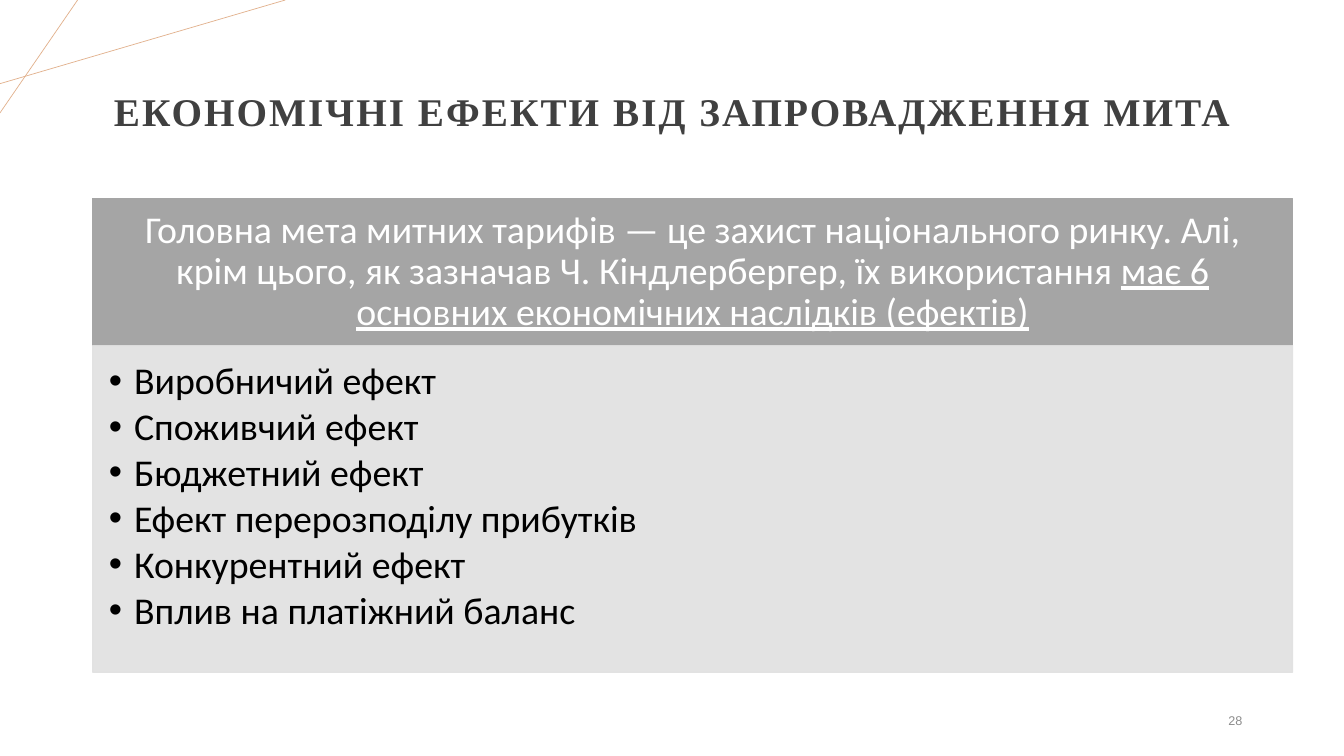
import pptx
import pptx.util
import pptx.dml.color
import pptx.enum.shapes
import pptx.enum.text
import pptx.oxml
import pptx.oxml.ns

Inches, Pt = pptx.util.Inches, pptx.util.Pt
RGBColor = pptx.dml.color.RGBColor
ALIGN = pptx.enum.text.PP_ALIGN
ANCHOR = pptx.enum.text.MSO_ANCHOR
SHAPE = pptx.enum.shapes.MSO_SHAPE
NS = pptx.oxml.ns.nsdecls("a")

# Content
TITLE = "ЕКОНОМІЧНІ ЕФЕКТИ ВІД ЗАПРОВАДЖЕННЯ МИТА"
INTRO = [
    ("Головна мета митних тарифів — це захист національного ринку. Алі, "
     "крім цього, як зазначав Ч. Кіндлербергер, їх використання ", False),
    ("має 6 основних економічних наслідків (ефектів)", True),
]
EFFECTS = [
    "Виробничий ефект",
    "Споживчий ефект",
    "Бюджетний ефект",
    "Ефект перерозподілу прибутків",
    "Конкурентний ефект",
    "Вплив на платіжний баланс",
]
PAGE = "28"
CORNER_LINES = [(0, 0.83, 2.83, 0), (0.77, 0, 0, 1.12)]

# Layout in inches
LEFT, TOP, WIDTH = 0.92, 1.97, 11.9
HEAD_H, BODY_H = 1.46, 3.24

# Colours
ORANGE = RGBColor(0xE2, 0xB1, 0x8D)
GREY = RGBColor(0xA5, 0xA5, 0xA5)
PALE = RGBColor(0xE1, 0xE1, 0xE1)
DARK = RGBColor(0x40, 0x40, 0x40)
MUTED = RGBColor(0x8C, 0x8C, 0x8C)
WHITE = RGBColor(0xFF, 0xFF, 0xFF)
BLACK = RGBColor(0, 0, 0)


def set_frame(sp, anchor, insets=(0.1, 0.05, 0.1, 0.05)):
    tf = sp.text_frame
    tf.word_wrap = True
    tf.vertical_anchor = anchor
    tf.margin_left, tf.margin_top, tf.margin_right, tf.margin_bottom = map(Inches, insets)
    return tf


def add_run(p, text, font, size, color):
    r = p.add_run()
    r.text = text
    r.font.name, r.font.size = font, Pt(size)
    r.font.color.rgb = color
    return r


def add_panel(s, top, height, color):
    sp = s.shapes.add_shape(SHAPE.RECTANGLE, Inches(LEFT), Inches(top),
                            Inches(WIDTH), Inches(height))
    sp.shadow.inherit = False
    sp.fill.solid()
    sp.fill.fore_color.rgb = color
    sp.line.color.rgb = color
    sp.line.width = Pt(1)
    return sp


def add_bullet(p):
    pPr = p._p.get_or_add_pPr()
    pPr.set("marL", str(Inches(0.25)))
    pPr.set("indent", str(Inches(-0.25)))
    pPr.append(pptx.oxml.parse_xml(f'<a:buFont {NS} typeface="Arial"/>'))
    pPr.append(pptx.oxml.parse_xml(f'<a:buChar {NS} char="•"/>'))


prs = pptx.Presentation()
prs.slide_width, prs.slide_height = Inches(13.33), Inches(7.5)
s = prs.slides.add_slide(prs.slide_layouts[6])

# Corner lines
for ends in CORNER_LINES:
    line = s.shapes.add_connector(pptx.enum.shapes.MSO_CONNECTOR.STRAIGHT, *map(Inches, ends))
    line.line.color.rgb = ORANGE
    line.line.width = Pt(0.5)
    line._element.spPr.append(pptx.oxml.parse_xml(f"<a:effectLst {NS}/>"))

# Heading panel
head = add_panel(s, TOP, HEAD_H, GREY)
p = set_frame(head, ANCHOR.MIDDLE, (0.21, 0.12, 0.21, 0.12)).paragraphs[0]
p.alignment, p.line_spacing = ALIGN.CENTER, 0.9
for text, underlined in INTRO:
    r = add_run(p, text, "Calibri", 27, WHITE)
    if underlined:
        r.font.underline = True

# Effects panel, slightly transparent
body = add_panel(s, TOP + HEAD_H, BODY_H, PALE)
for clr in body._element.spPr.iter(pptx.oxml.ns.qn("a:srgbClr")):
    clr.append(pptx.oxml.parse_xml(f'<a:alpha {NS} val="90000"/>'))
tf = set_frame(body, ANCHOR.TOP, (0.16, 0.16, 0.21, 0.24))
for i, effect in enumerate(EFFECTS):
    p = tf.add_paragraph() if i else tf.paragraphs[0]
    p.alignment, p.line_spacing, p.space_after = ALIGN.LEFT, 0.9, Pt(3.6)
    add_bullet(p)
    add_run(p, effect, "Calibri", 27, BLACK)

# Title
sp = s.shapes.add_textbox(Inches(LEFT), Inches(0.4), Inches(11.5), Inches(1.45))
p = set_frame(sp, ANCHOR.MIDDLE).paragraphs[0]
p.alignment, p.line_spacing = ALIGN.CENTER, 0.9
r = add_run(p, TITLE, "Times New Roman", 28, DARK)
r.font.bold = True
r._r.get_or_add_rPr().set("spc", "150")

# Page number
sp = s.shapes.add_textbox(Inches(9.42), Inches(6.95), Inches(3), Inches(0.4))
p = set_frame(sp, ANCHOR.MIDDLE).paragraphs[0]
p.alignment = ALIGN.RIGHT
add_run(p, PAGE, "Arial", 9, MUTED)

prs.save("out.pptx")
